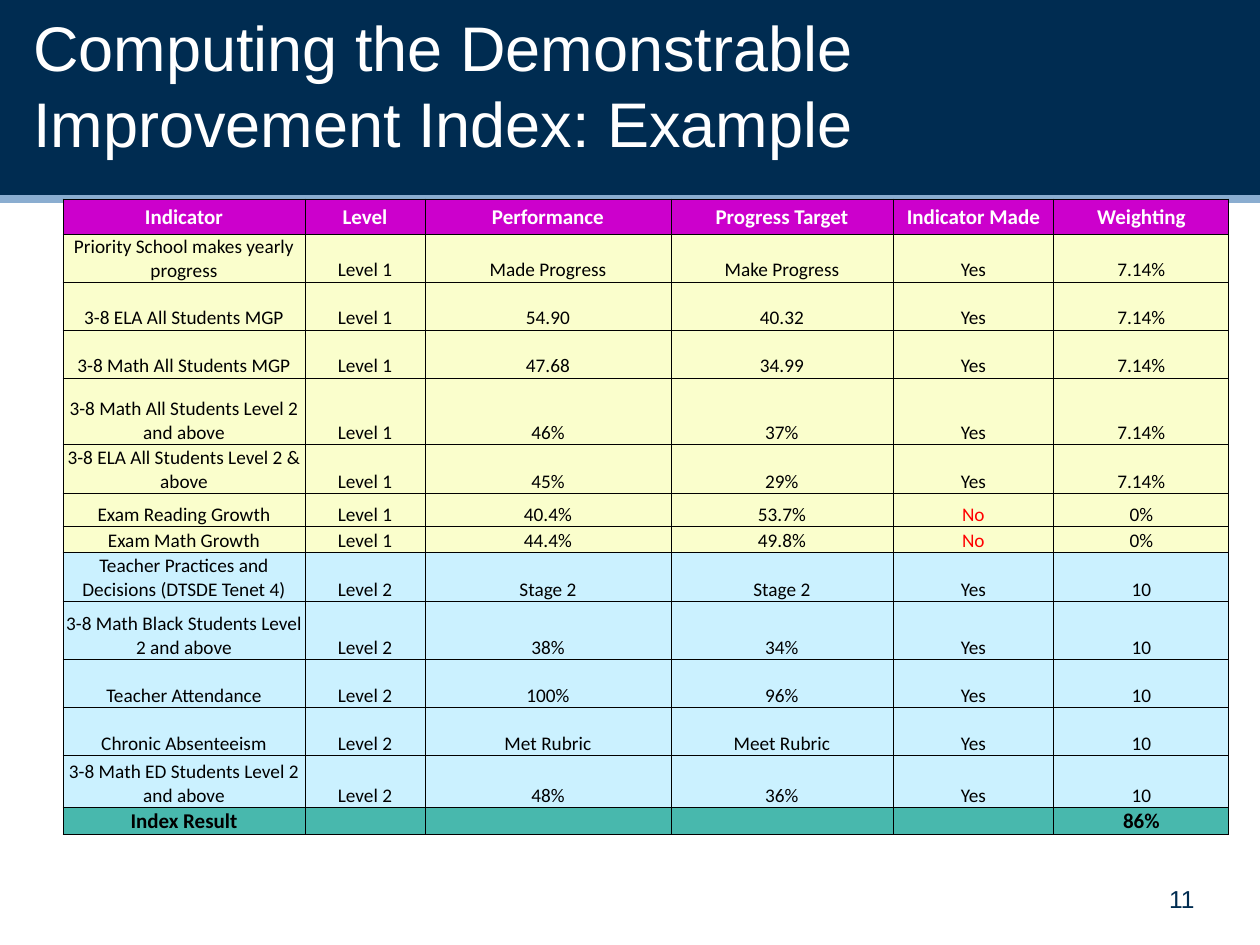
"""Build the Demonstrable Improvement Index example slide."""
import pptx
import pptx.dml.color
import pptx.enum.shapes
import pptx.enum.text
import pptx.oxml.ns
import pptx.util
from lxml import etree

PX = 914400 // 126
ALIGN = pptx.enum.text.PP_ALIGN
ANCHOR = pptx.enum.text.MSO_ANCHOR
NAVY, WHITE, BLACK, RED = "002C51", "FFFFFF", "000000", "FF0000"
MAGENTA, YELLOW, BLUE, TEAL = "CC00CC", "FAFECC", "CBF1FF", "48B8AD"

COLUMNS = [242, 120, 246, 222, 161, 175]
HEADER = ["Indicator", "Level", "Performance", "Progress Target",
          "Indicator Made", "Weighting"]
LEVEL_1 = [
    (48, "Priority School makes yearly progress", "Made Progress",
     "Make Progress", "Yes", "7.14%"),
    (48, "3-8 ELA All Students MGP", "54.90", "40.32", "Yes", "7.14%"),
    (48, "3-8 Math All Students MGP", "47.68", "34.99", "Yes", "7.14%"),
    (67, "3-8 Math All Students Level 2 and above", "46%", "37%", "Yes", "7.14%"),
    (49, "3-8 ELA All Students Level 2 & above", "45%", "29%", "Yes", "7.14%"),
    (33, "Exam Reading Growth", "40.4%", "53.7%", "No", "0%"),
    (26, "Exam Math Growth", "44.4%", "49.8%", "No", "0%"),
]
LEVEL_2 = [
    (49, "Teacher Practices and Decisions (DTSDE Tenet 4)", "Stage 2",
     "Stage 2", "Yes", "10"),
    (58, "3-8 Math Black Students Level 2 and above", "38%", "34%", "Yes", "10"),
    (48, "Teacher Attendance", "100%", "96%", "Yes", "10"),
    (48, "Chronic Absenteeism", "Met Rubric", "Meet Rubric", "Yes", "10"),
    (52, "3-8 Math ED Students Level 2 and above", "48%", "36%", "Yes", "10"),
]
RESULT = ["Index Result", "", "", "", "", "86%"]


def px(n):
    """Turn pixels into EMU."""
    return pptx.util.Emu(n * PX)


def rgb(value):
    """Turn a hex string into a colour."""
    return pptx.dml.color.RGBColor.from_string(value)


def sub(parent, tag, **attrs):
    """Append an XML element to parent."""
    return etree.SubElement(parent, pptx.oxml.ns.qn(tag), attrs)


class Deck:
    """Hold the style and the current slide."""

    heading, body = "Arial", "Calibri"

    def __init__(self, width, height):
        """Start a presentation with one blank slide."""
        self.prs = pptx.Presentation()
        self.prs.slide_width, self.prs.slide_height = px(width), px(height)
        self.s = self.prs.slides.add_slide(self.prs.slide_layouts[6])

    def set_text(self, tf, text, font, size, color, align, bold=False):
        """Set the text of a frame and format its runs."""
        tf.text = text
        p = tf.paragraphs[0]
        p.alignment = align
        for r in p.runs:
            r.font.name, r.font.size, r.font.bold = font, pptx.util.Pt(size), bold
            r.font.color.rgb = rgb(color)
        if not text:
            sub(p._p, "a:endParaRPr", sz=str(size * 100))

    def rect(self, x, y, w, h, fill):
        """Add a plain filled rectangle."""
        sp = self.s.shapes.add_shape(
            pptx.enum.shapes.MSO_SHAPE.RECTANGLE, px(x), px(y), px(w), px(h))
        sp.shadow.inherit = False
        sp.fill.solid()
        sp.fill.fore_color.rgb = rgb(fill)
        sp.line.fill.background()

    def line(self, x1, y1, x2, y2, color, width):
        """Add a straight line."""
        ln = self.s.shapes.add_connector(
            pptx.enum.shapes.MSO_CONNECTOR.STRAIGHT, px(x1), px(y1), px(x2), px(y2))
        ln.line.color.rgb = rgb(color)
        ln.line.width = pptx.util.Pt(width)
        sub(ln._element.spPr, "a:effectLst")

    def text(self, x, y, w, h, text, size, color, align=ALIGN.LEFT):
        """Add a vertically centred text box."""
        tf = self.s.shapes.add_textbox(px(x), px(y), px(w), px(h)).text_frame
        tf.word_wrap = True
        tf.vertical_anchor = ANCHOR.MIDDLE
        self.set_text(tf, text, self.heading, size, color, align)

    def table(self, x, y, columns, rows):
        """Add a table of (height, fill, color, strong, values) rows."""
        height = sum(row[0] for row in rows)
        table = self.s.shapes.add_table(
            len(rows), len(columns), px(x), px(y), px(sum(columns)), px(height)).table
        table.first_row = table.horz_banding = False
        for column, width in zip(table.columns, columns):
            column.width = px(width)
        for row, (h, fill, color, strong, values) in zip(table.rows, rows):
            row.height = px(h)
            for cell, value in zip(row.cells, values):
                self.cell(cell, value, fill, RED if value == "No" else color, strong)

    def cell(self, cell, text, fill, color, strong):
        """Fill, border and label one table cell."""
        cell.margin_left = cell.margin_right = cell.margin_top = px(1)
        cell.margin_bottom = 0
        cell.vertical_anchor = ANCHOR.MIDDLE if strong else ANCHOR.BOTTOM
        for side in "LRTB":
            ln = sub(cell._tc.get_or_add_tcPr(), "a:ln" + side, w="6350")
            sub(sub(ln, "a:solidFill"), "a:srgbClr", val=BLACK)
        cell.fill.solid()
        cell.fill.fore_color.rgb = rgb(fill)
        self.set_text(cell.text_frame, text, self.body, 12 if strong else 11,
                      color, ALIGN.CENTER, strong)


def level_rows(level, fill, indicators):
    """Expand the indicators of one level into table rows."""
    return [(h, fill, BLACK, False, [name, level, *values])
            for h, name, *values in indicators]


def main():
    """Build and save the slide."""
    deck = Deck(1260, 945)
    deck.rect(0, 0, 1260, 199, NAVY)
    deck.line(0, 199, 1260, 199, "8AADD0", 4.5)
    deck.text(21, 33, 1218, 103,
              "Computing the Demonstrable\vImprovement Index: Example", 36, WHITE)
    deck.text(914, 878, 293, 42, "11", 14, NAVY, ALIGN.RIGHT)
    deck.table(63, 199, COLUMNS, [
        (35, MAGENTA, WHITE, True, HEADER),
        *level_rows("Level 1", YELLOW, LEVEL_1),
        *level_rows("Level 2", BLUE, LEVEL_2),
        (26, TEAL, BLACK, True, RESULT),
    ])
    deck.prs.save("out.pptx")


if __name__ == "__main__":
    main()
